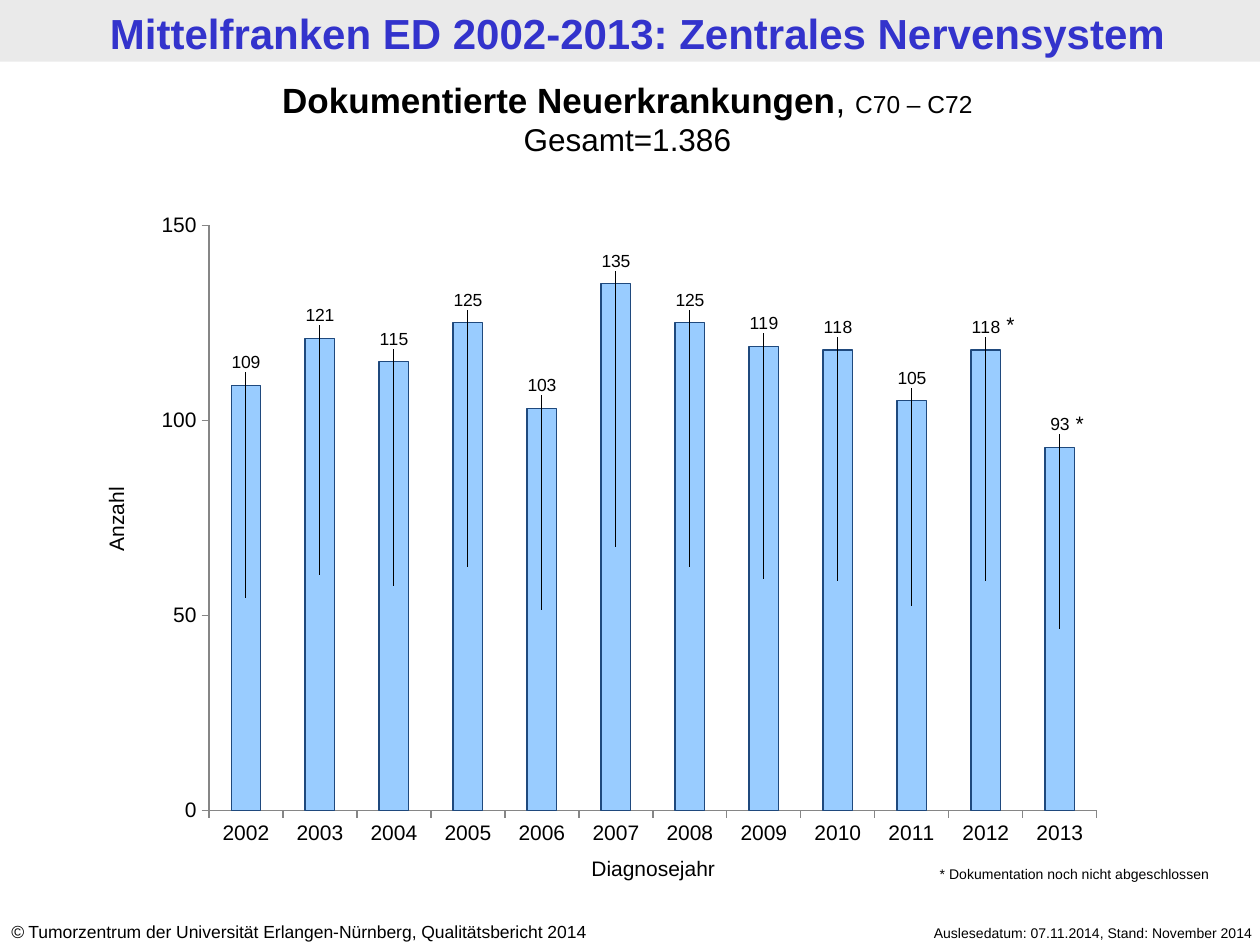
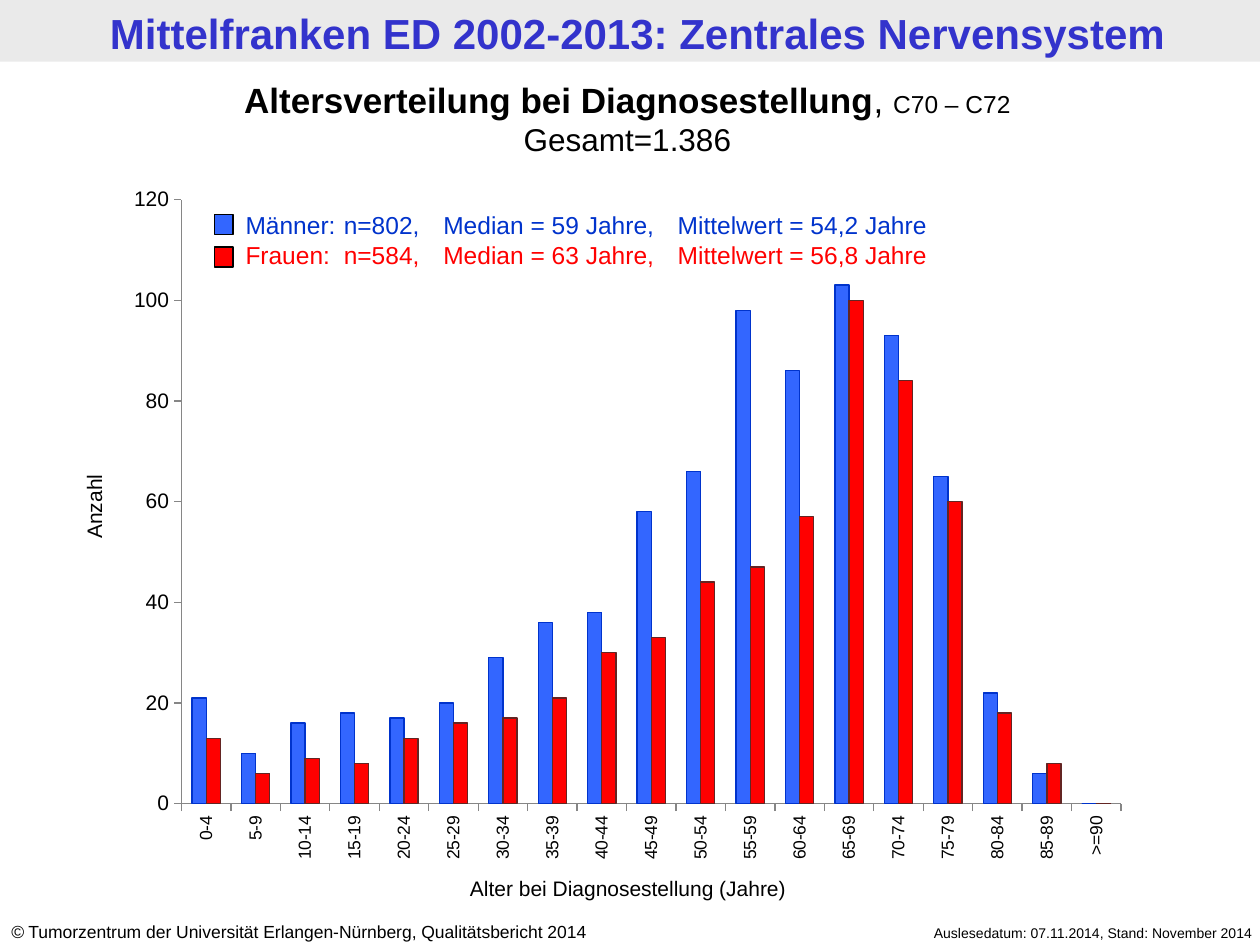
from lxml import etree
from pptx import Presentation
from pptx.chart.data import CategoryChartData
from pptx.dml.color import RGBColor
from pptx.enum.chart import XL_CHART_TYPE, XL_TICK_MARK
from pptx.enum.shapes import MSO_SHAPE
from pptx.enum.text import MSO_AUTO_SIZE, PP_ALIGN
from pptx.oxml.ns import qn
from pptx.util import Inches, Pt

BLACK = RGBColor(0x00, 0x00, 0x00)
BAND_GREY = RGBColor(0xEA, 0xEA, 0xEA)
AXIS_GREY = RGBColor(0x86, 0x86, 0x86)
TITLE_BLUE = RGBColor(0x33, 0x33, 0xCC)
CASES_FILL = RGBColor(0x99, 0xCC, 0xFF)
CASES_LINE = RGBColor(0x1F, 0x49, 0x7D)
MEN_FILL = RGBColor(0x33, 0x66, 0xFF)
MEN_LINE = RGBColor(0x00, 0x33, 0xCC)
WOMEN_FILL = RGBColor(0xFF, 0x00, 0x00)
WOMEN_LINE = RGBColor(0x63, 0x25, 0x23)
FONT = "Arial"

YEARS = [str(year) for year in range(2002, 2014)]
CASES = [109, 121, 115, 125, 103, 135, 125, 119, 118, 105, 118, 93]
AGES = [f"{start}-{start + 4}" for start in range(0, 90, 5)] + [">=90"]
MEN = [21, 10, 16, 18, 17, 20, 29, 36, 38, 58, 66, 98, 86, 103, 93, 65, 22, 6, 0]
WOMEN = [13, 6, 9, 8, 13, 16, 17, 21, 30, 33, 44, 47, 57, 100, 84, 60, 18, 8, 0]
LEGEND_TABS = (0.78, 1.57, 3.43)


def style_font(font, size, color=BLACK, bold=False, italic=False):
    """Apply the shared typeface with the given look."""
    font.name = FONT
    font.size = Pt(size)
    font.bold = bold
    font.italic = italic
    font.color.rgb = color


def add_text(slide, box, text, size, color=BLACK, align=PP_ALIGN.LEFT, bold=False):
    """Add a wrapped text box whose lines share one style."""
    textbox = slide.shapes.add_textbox(*map(Inches, box))
    frame = textbox.text_frame
    frame.word_wrap = True
    frame.auto_size = MSO_AUTO_SIZE.SHAPE_TO_FIT_TEXT
    frame.text = text
    for paragraph in frame.paragraphs:
        paragraph.alignment = align
        for run in paragraph.runs:
            style_font(run.font, size, color, bold)
    return textbox


def add_rectangle(slide, box, fill, line=None):
    """Add a flat rectangle with an optional outline."""
    rectangle = slide.shapes.add_shape(MSO_SHAPE.RECTANGLE, *map(Inches, box))
    rectangle.shadow.inherit = False
    rectangle.fill.solid()
    rectangle.fill.fore_color.rgb = fill
    if line is None:
        rectangle.line.fill.background()
    else:
        rectangle.line.color.rgb = line
        rectangle.line.width = Pt(0.75)


def add_run(paragraph, text, size, **look):
    """Append a styled run to a paragraph."""
    run = paragraph.add_run()
    run.text = text
    style_font(run.font, size, **look)


def add_report_slide(prs, heading):
    """Add a slide with title band, footers and the two-line heading."""
    slide = prs.slides.add_slide(prs.slide_layouts[6])
    add_rectangle(slide, (0, 0, 10, 0.49), BAND_GREY)
    add_text(slide, (0.06, 0.01, 10, 0.49),
             "Mittelfranken ED 2002-2013: Zentrales Nervensystem",
             24, TITLE_BLUE, PP_ALIGN.CENTER, bold=True)
    add_text(slide, (6.65, 7.29, 3.39, 0.24),
             "Auslesedatum: 07.11.2014, Stand: November 2014", 8, align=PP_ALIGN.RIGHT)
    copyright_line = add_text(slide, (-0.01, 7.26, 5.24, 0.27), "", 10).text_frame.paragraphs[0]
    add_run(copyright_line, "©", 10, italic=True)
    add_run(copyright_line,
            " Tumorzentrum der Universität Erlangen-Nürnberg, Qualitätsbericht 2014", 10)

    headline = add_text(slide, (-0.04, 0.57, 10.04, 0.74), "\nGesamt=1.386", 18,
                        align=PP_ALIGN.CENTER).text_frame.paragraphs[0]
    add_run(headline, heading, 20, bold=True)
    add_run(headline, ", ", 20)
    add_run(headline, "C70 – C72", 14)
    return slide


def add_axis_titles(slide, category_box, category_title, value_box):
    """Label the category axis and, turned upright, the value axis."""
    add_text(slide, category_box, category_title, 12, align=PP_ALIGN.CENTER)
    value_title = add_text(slide, value_box, "Anzahl", 12, align=PP_ALIGN.CENTER)
    value_title.rotation = 270


def set_layout(parent, position, **values):
    """Give a chart part a manual layout, replacing any present one."""
    for present in parent.findall(qn("c:layout")):
        parent.remove(present)
    layout = etree.Element(qn("c:layout"))
    manual = etree.SubElement(layout, qn("c:manualLayout"))
    for tag, value in values.items():
        etree.SubElement(manual, qn(f"c:{tag}")).set("val", str(value))
    parent.insert(position, layout)


def add_columns(slide, chart_type, box, categories, series, maximum, step, plot, category_size=12):
    """Add a column chart; series holds (name, values, fill, line) tuples."""
    data = CategoryChartData()
    data.categories = categories
    for name, values, _, _ in series:
        data.add_series(name, values)
    chart = slide.shapes.add_chart(chart_type, *map(Inches, box), data).chart
    chart.has_legend = False
    chart.has_title = False
    style_font(chart.font, 12)

    columns = chart.plots[0]
    columns.vary_by_categories = False
    columns.gap_width = 150
    columns.overlap = 100 if chart_type == XL_CHART_TYPE.COLUMN_STACKED else 0
    for column, (_, _, fill, line) in zip(columns.series, series):
        column.format.fill.solid()
        column.format.fill.fore_color.rgb = fill
        column.format.line.color.rgb = line
        column.format.line.width = Pt(0.75)

    for axis, size in ((chart.category_axis, category_size), (chart.value_axis, 12)):
        axis.has_major_gridlines = False
        axis.major_tick_mark = XL_TICK_MARK.OUTSIDE
        axis.minor_tick_mark = XL_TICK_MARK.NONE
        axis.format.line.color.rgb = AXIS_GREY
        style_font(axis.tick_labels.font, size)
    chart.value_axis.minimum_scale = 0
    chart.value_axis.maximum_scale = maximum
    chart.value_axis.major_unit = step

    x, y, w, h = plot
    set_layout(chart.element.find(".//" + qn("c:plotArea")), 0, layoutTarget="inner",
               xMode="edge", yMode="edge", x=x, y=y, w=w, h=h)
    return chart


def raise_labels(chart, values, maximum, plot_height, gap=0.035):
    """Move each value label from the middle of its column to just above it."""
    column = chart.plots[0].series[0]
    for index in range(len(values)):
        style_font(column.points[index].data_label.font, 10)
    for label, value in zip(chart.element.iter(qn("c:dLbl")), values):
        offset = value / maximum * plot_height / 2 + gap
        set_layout(label, 1, x=0, y=round(-offset, 3))


def add_case_slide(prs):
    """Build the slide of documented new cases per year."""
    slide = add_report_slide(prs, "Dokumentierte Neuerkrankungen")
    plot = (0.066, 0.029, 0.914, 0.903)
    chart = add_columns(slide, XL_CHART_TYPE.COLUMN_STACKED, (1.15, 1.64, 7.71, 5.14), YEARS,
                        [("Neuerkrankungen", CASES, CASES_FILL, CASES_LINE)], 150, 50, plot)
    raise_labels(chart, CASES, 150, plot[3])
    add_axis_titles(slide, (4.06, 6.74, 2.25, 0.3), "Diagnosejahr", (0.31, 3.97, 1.22, 0.3))
    for left, top in ((7.76, 2.42), (8.31, 3.21)):
        add_text(slide, (left, top, 0.39, 0.3), "*", 12, align=PP_ALIGN.RIGHT)
    add_text(slide, (7.36, 6.82, 2.48, 0.24), "* Dokumentation noch nicht abgeschlossen", 8)


def add_legend(slide):
    """Add the colour keys and the tabbed statistics for men and women."""
    statistics = add_text(
        slide, (1.85, 1.62, 6.85, 0.57),
        "Männer: \tn=802, \tMedian = 59 Jahre, \tMittelwert = 54,2 Jahre\n"
        "Frauen: \tn=584, \tMedian = 63 Jahre,\tMittelwert = 56,8 Jahre", 14)
    looks = ((MEN_FILL, MEN_LINE, 1.7), (WOMEN_FILL, WOMEN_FILL, 1.96))
    for paragraph, (fill, text_color, top) in zip(statistics.text_frame.paragraphs, looks):
        tab_list = etree.SubElement(paragraph._p.get_or_add_pPr(), qn("a:tabLst"))
        for stop in LEGEND_TABS:
            etree.SubElement(tab_list, qn("a:tab"), pos=str(Inches(stop)), algn="l")
        for run in paragraph.runs:
            run.font.color.rgb = text_color
        add_rectangle(slide, (1.7, top, 0.15, 0.16), fill, BLACK)


def add_age_slide(prs):
    """Build the slide of age at diagnosis by sex."""
    slide = add_report_slide(prs, "Altersverteilung bei Diagnosestellung")
    chart = add_columns(slide, XL_CHART_TYPE.COLUMN_CLUSTERED, (0.91, 1.39, 8.16, 5.55), AGES,
                        [("Männer", MEN, MEN_FILL, MEN_LINE),
                         ("Frauen", WOMEN, WOMEN_FILL, WOMEN_LINE)],
                        120, 20, (0.065, 0.035, 0.914, 0.864), category_size=10)
    age_labels = chart.element.find(f".//{qn('c:catAx')}/{qn('c:txPr')}/{qn('a:bodyPr')}")
    age_labels.set("rot", "-5400000")
    age_labels.set("vert", "horz")
    add_legend(slide)
    add_axis_titles(slide, (3.45, 6.9, 3.07, 0.3), "Alter bei Diagnosestellung (Jahre)",
                    (-0.56, 3.87, 2.61, 0.3))


def main():
    """Build and save the two report slides."""
    prs = Presentation()
    prs.slide_width = Inches(10)
    prs.slide_height = Inches(7.5)
    add_case_slide(prs)
    add_age_slide(prs)
    prs.save("out.pptx")


if __name__ == "__main__":
    main()
